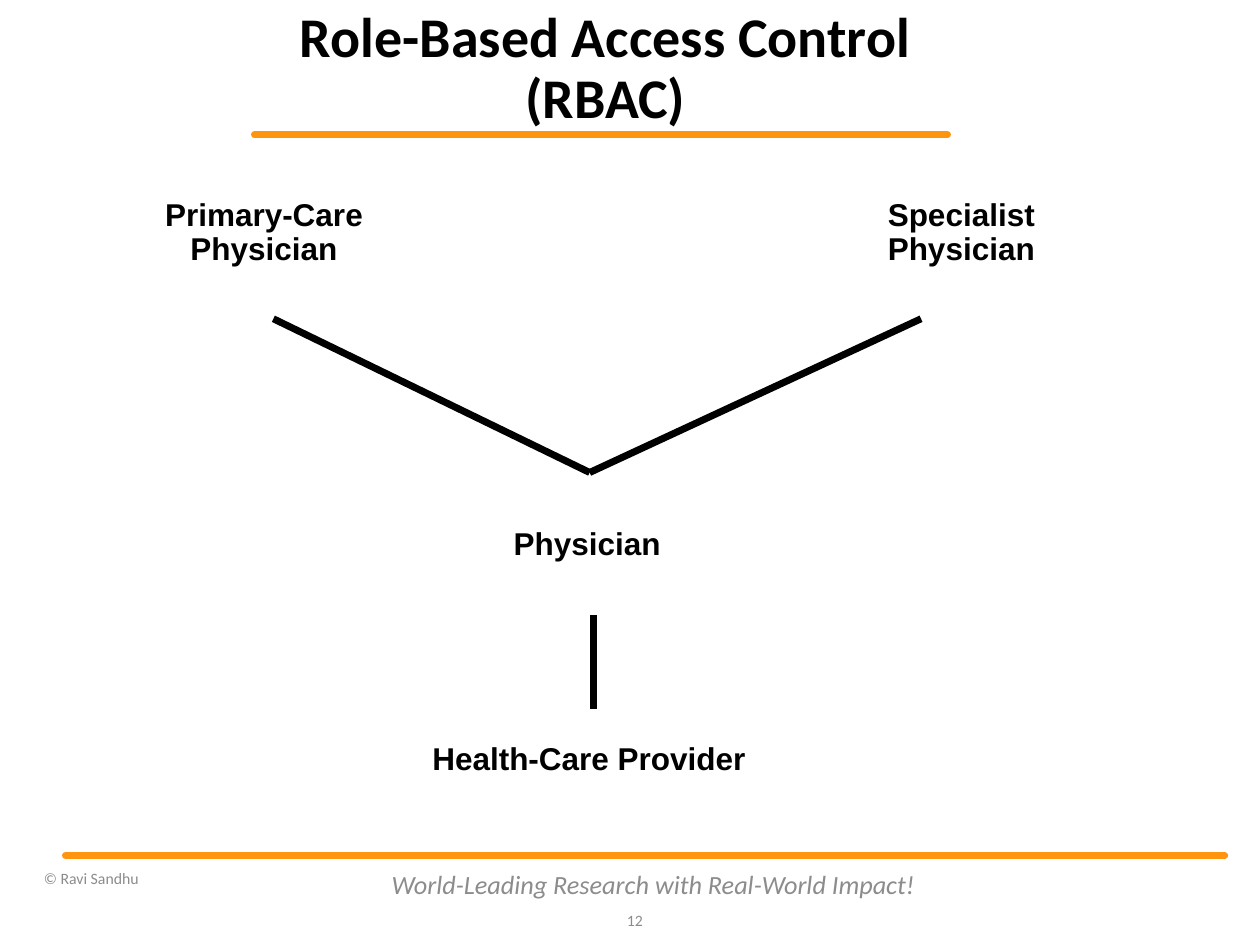
import dataclasses

import pptx
import pptx.dml.color
import pptx.enum.shapes
import pptx.enum.text
import pptx.oxml
import pptx.oxml.ns
import pptx.util
from pptx.util import Inches

ALIGN = pptx.enum.text.PP_ALIGN
ANCHOR = pptx.enum.text.MSO_ANCHOR


@dataclasses.dataclass(frozen=True)
class Theme:
    ink: str = "000000"
    muted: str = "8C8C8C"
    accent: str = "FF950E"
    heading_font: str = "Calibri"
    label_font: str = "Arial"
    title_size: int = 32
    label_size: int = 18
    motto_size: int = 15
    footer_size: int = 9
    line_width: int = 4
    line_spacing: float = 0.9


class SlideBuilder:
    def __init__(self, slide, theme):
        self.slide = slide
        self.theme = theme

    def fill_text(self, frame, lines, font, size, color, align,
                  spacing=None, bold=False, italic=False):
        """Fill a text frame with one paragraph for each line."""
        for index, line in enumerate(lines):
            para = frame.paragraphs[0] if index == 0 else frame.add_paragraph()
            para.alignment = align
            para.line_spacing = spacing
            span = para.add_run()
            span.text = line
            span.font.name = font
            span.font.size = pptx.util.Pt(size)
            span.font.bold = bold
            span.font.italic = italic
            span.font.color.rgb = pptx.dml.color.RGBColor.from_string(color)

    def set_insets(self, frame, across, down):
        frame.margin_left = frame.margin_right = Inches(across)
        frame.margin_top = frame.margin_bottom = Inches(down)

    def title(self, text, left, top, width, height):
        box = self.slide.shapes.title
        box.left, box.top = Inches(left), Inches(top)
        box.width, box.height = Inches(width), Inches(height)
        frame = box.text_frame
        frame.word_wrap = True
        frame.auto_size = pptx.enum.text.MSO_AUTO_SIZE.NONE
        frame.vertical_anchor = ANCHOR.MIDDLE
        self.set_insets(frame, 0, 0)
        self.fill_text(frame, [text], self.theme.heading_font, self.theme.title_size,
                       self.theme.ink, ALIGN.CENTER, self.theme.line_spacing, bold=True)

    def text_box(self, left, top, width, height):
        box = self.slide.shapes.add_textbox(
            Inches(left), Inches(top), Inches(width), Inches(height))
        return box.text_frame

    def role(self, lines, left, top, width, height):
        frame = self.text_box(left, top, width, height)
        frame.word_wrap = False
        frame.auto_size = pptx.enum.text.MSO_AUTO_SIZE.SHAPE_TO_FIT_TEXT
        self.set_insets(frame, 0.11, 0.05)
        self.fill_text(frame, lines, self.theme.label_font, self.theme.label_size,
                       self.theme.ink, ALIGN.CENTER, self.theme.line_spacing, bold=True)

    def footer(self, text, left, top, width, height, size, align, italic=False):
        frame = self.text_box(left, top, width, height)
        frame.word_wrap = True
        frame.vertical_anchor = ANCHOR.MIDDLE
        self.fill_text(frame, [text], self.theme.heading_font, size,
                       self.theme.muted, align, italic=italic)

    def line(self, start, end, color, round_ends=False):
        connector = self.slide.shapes.add_connector(
            pptx.enum.shapes.MSO_CONNECTOR.STRAIGHT,
            Inches(start[0]), Inches(start[1]), Inches(end[0]), Inches(end[1]))
        connector.line.width = pptx.util.Pt(self.theme.line_width)
        connector.line.color.rgb = pptx.dml.color.RGBColor.from_string(color)
        properties = connector._element.spPr
        if round_ends:
            properties.find(pptx.oxml.ns.qn("a:ln")).set("cap", "rnd")
        properties.append(pptx.oxml.parse_xml(
            f"<a:effectLst {pptx.oxml.ns.nsdecls('a')}/>"))


def main():
    deck = pptx.Presentation()
    deck.slide_width, deck.slide_height = Inches(10), Inches(7.5)
    theme = Theme()
    page = SlideBuilder(deck.slides.add_slide(deck.slide_layouts[5]), theme)

    for left, right, height in ((2.02, 7.52, 1.07), (0.52, 9.72, 6.79)):
        page.line((left, height), (right, height), theme.accent, round_ends=True)

    page.footer("World-Leading Research with Real-World Impact!", 3, 6.82, 4.37, 0.4,
                theme.motto_size, ALIGN.CENTER, italic=True)
    page.footer("12", 4.8, 7.1, 0.4, 0.4, theme.footer_size, ALIGN.RIGHT)
    page.footer("© Ravi Sandhu", 0.25, 6.79, 2.75, 0.36, theme.footer_size, ALIGN.LEFT)
    page.title("Role-Based Access Control (RBAC)", 2.18, 0.3, 5.25, 0.51)

    page.role(["Health-Care Provider"], 3.31, 5.85, 2.73, 0.38)
    page.role(["Physician"], 3.96, 4.14, 1.4, 0.38)
    page.role(["Primary-Care", "Physician"], 1.19, 1.53, 1.81, 0.65)
    page.role(["Specialist", "Physician"], 6.93, 1.53, 1.4, 0.65)

    page.line((4.71, 4.88), (4.71, 5.63), theme.ink)
    junction = (4.68, 3.75)
    for specialty_x in (2.17, 7.31):
        page.line((specialty_x, 2.53), junction, theme.ink)

    deck.save("out.pptx")


if __name__ == "__main__":
    main()
